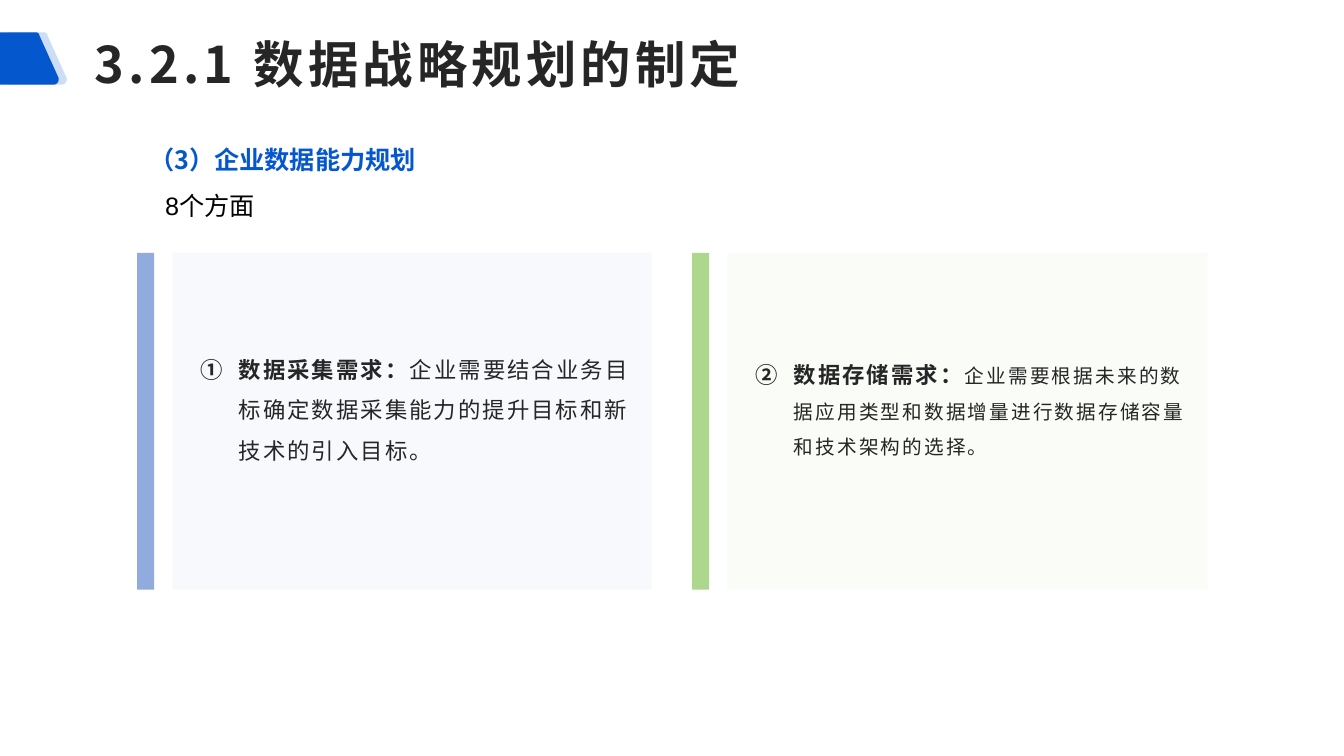
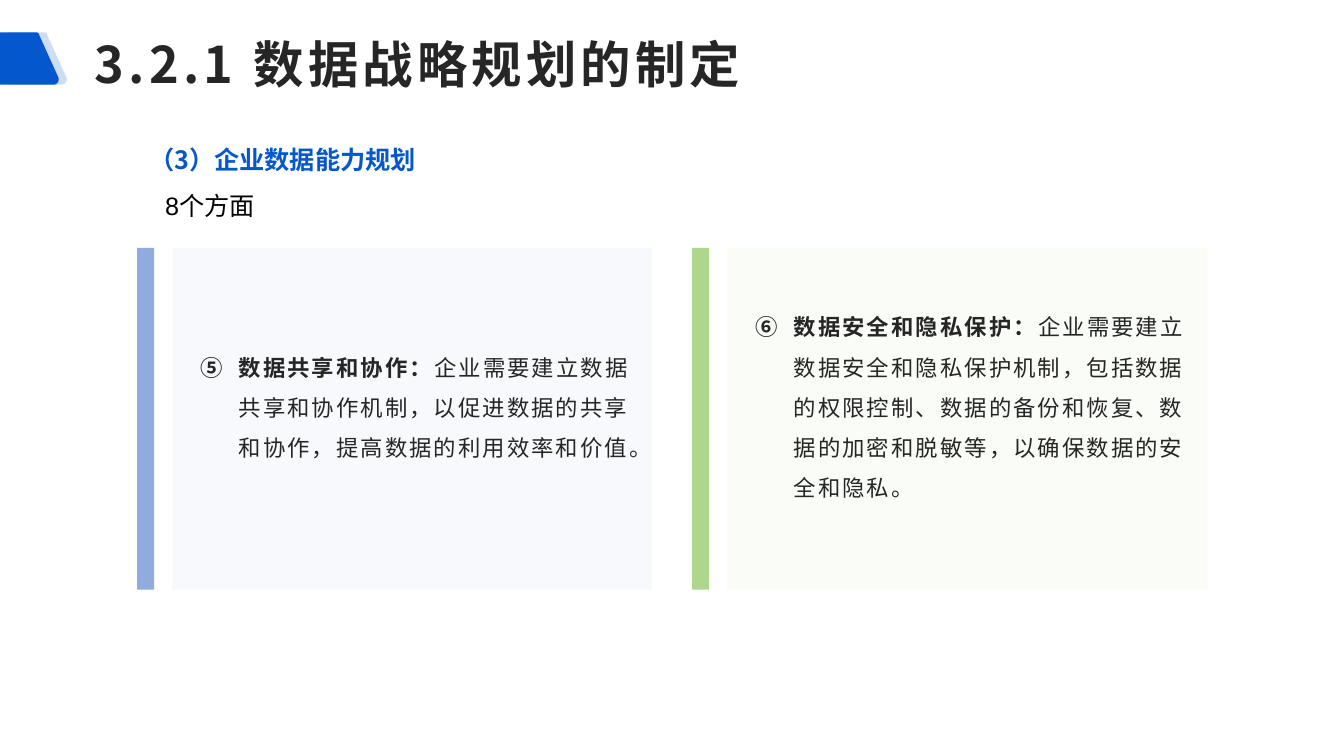
"""Two slides on planning enterprise data capabilities."""
from lxml import etree
from pptx import Presentation
from pptx.dml.color import RGBColor
from pptx.enum.shapes import MSO_SHAPE
from pptx.enum.text import MSO_ANCHOR, PP_ALIGN
from pptx.oxml.ns import qn
from pptx.util import Inches, Pt

RECTANGLE = MSO_SHAPE.RECTANGLE
TOP, MIDDLE = MSO_ANCHOR.TOP, MSO_ANCHOR.MIDDLE
LEFT, JUSTIFY = PP_ALIGN.LEFT, PP_ALIGN.JUSTIFY

COLORS = {"brand": "0557CD", "ink": "262626", "black": "000000"}
CARD_COLORS = [
    {"bar": "4874CB", "panel": "DAE3F5"},
    {"bar": "75BD42", "panel": "E3F2D9"},
]
CJK_FONT = "Noto Sans CJK SC"

TITLE = "3.2.1 数据战略规划的制定"
SECTION = "（3）企业数据能力规划"
COUNT = "8个方面"
SLIDES = [
    {"card_top": 2.51, "first_number": 1, "needs": [
        ("数据采集需求：", "企业需要结合业务目标确定数据采集能力的提升目标和新技术的引入目标。", 16),
        ("数据存储需求：", "企业需要根据未来的数据应用类型和数据增量进行数据存储容量和技术架构的选择。", 14),
    ]},
    {"card_top": 2.46, "first_number": 5, "needs": [
        ("数据共享和协作：", "企业需要建立数据共享和协作机制，以促进数据的共享和协作，提高数据的利用效率和价值。", 16),
        ("数据安全和隐私保护：",
         "企业需要建立数据安全和隐私保护机制，包括数据的权限控制、数据的备份和恢复、"
         "数据的加密和脱敏等，以确保数据的安全和隐私。", 16),
    ]},
]

CARD_LEFT, CARD_BOTTOM, CARD_PITCH = 1.36, 5.85, 5.505
BAR_WIDTH, PANEL_OFFSET, PANEL_WIDTH = 0.17, 0.35, 4.76
NEED_OFFSET, NEED_WIDTH, NEED_TOP_GAP, NEED_BOTTOM_GAP = 0.53, 4.47, 0.11, 0.47
TAB_TOP, TAB_BOTTOM, TAB_SHIFT = 0.32, 0.84, 0.08


def paint(shape, color, opacity=100):
    shape.shadow.inherit = False
    shape.fill.solid()
    shape.fill.fore_color.rgb = RGBColor.from_string(color)
    shape.line.fill.background()
    if opacity < 100:
        fill_color = shape.element.find(".//" + qn("a:srgbClr"))
        etree.SubElement(fill_color, qn("a:alpha"), val=str(opacity * 1000))


def add_text(slide, box, runs, *, size=18, color=COLORS["ink"], font=CJK_FONT, spacing=0,
             anchor=TOP, align=LEFT, line_spacing=1.0, left_indent=0, first_indent=0,
             number=None, insets=(0.1, 0.05)):
    frame = slide.shapes.add_textbox(*map(Inches, box)).text_frame
    frame.word_wrap = True
    frame.vertical_anchor = anchor
    frame.margin_left = frame.margin_right = Inches(insets[0])
    frame.margin_top = frame.margin_bottom = Inches(insets[1])
    paragraph = frame.paragraphs[0]
    properties = paragraph._p.get_or_add_pPr()
    properties.set("marL", str(Inches(left_indent)))
    properties.set("indent", str(Inches(first_indent)))
    if number:
        etree.SubElement(properties, qn("a:buFont"), typeface=font)
        etree.SubElement(properties, qn("a:buAutoNum"), type="circleNumDbPlain", startAt=str(number))
    paragraph.alignment = align
    paragraph.line_spacing = line_spacing
    for text, form in runs:
        run = paragraph.add_run()
        run.text = text
        run.font.size = Pt(form.get("size", size))
        run.font.bold = form.get("bold", False)
        run.font.color.rgb = RGBColor.from_string(color)
        run.font.name = font
        letters = run._r.get_or_add_rPr()
        letters.set("lang", "zh-CN")
        letters.set("spc", str(int(spacing * 100)))
        etree.SubElement(letters, qn("a:ea"), typeface=CJK_FONT)


def curve(start, control_1, control_2, end, steps=8):
    points = []
    for step in range(steps + 1):
        t = step / steps
        weights = ((1 - t) ** 3, 3 * t * (1 - t) ** 2, 3 * t ** 2 * (1 - t), t ** 3)
        corners = (start, control_1, control_2, end)
        points.append(tuple(sum(w * c[axis] for w, c in zip(weights, corners)) for axis in (0, 1)))
    return points


def add_title_tab(slide, shift, opacity):
    outline = (curve((0.35, TAB_TOP), (0.37, TAB_TOP), (0.39, 0.33), (0.39, 0.35))
               + curve((0.58, 0.77), (0.59, 0.8), (0.57, TAB_BOTTOM), (0.53, TAB_BOTTOM))
               + [(0, TAB_BOTTOM)])
    builder = slide.shapes.build_freeform(Inches(shift), Inches(TAB_TOP))
    builder.add_line_segments([(Inches(x + shift), Inches(y)) for x, y in outline], close=True)
    paint(builder.convert_to_shape(), COLORS["brand"], opacity)


def add_card(slide, index, top, number, need):
    heading, detail, detail_size = need
    left = CARD_LEFT + index * CARD_PITCH
    height = CARD_BOTTOM - top
    for part, offset, width, opacity in (("panel", PANEL_OFFSET, PANEL_WIDTH, 20),
                                         ("bar", 0, BAR_WIDTH, 60)):
        block = slide.shapes.add_shape(
            RECTANGLE, *map(Inches, (left + offset, top, width, height)))
        paint(block, CARD_COLORS[index][part], opacity)
    add_text(slide, (left + NEED_OFFSET, top + NEED_TOP_GAP, NEED_WIDTH,
                     height - NEED_TOP_GAP - NEED_BOTTOM_GAP),
             [(heading, {"bold": True}), (detail, {"size": detail_size})],
             size=16, spacing=1.5, anchor=MIDDLE, line_spacing=1.5,
             left_indent=0.38, first_indent=-0.38, number=number)


def add_header(slide):
    add_title_tab(slide, TAB_SHIFT, 20)
    add_title_tab(slide, 0, 100)
    add_text(slide, (0.87, 0.26, 11.33, 0.74), [(TITLE, {"bold": True})],
             size=36, spacing=3, anchor=MIDDLE, insets=(0.07, 0.03))
    add_text(slide, (0.88, 1.23, 11.56, 0.77), [(SECTION, {"bold": True})],
             color=COLORS["brand"], align=JUSTIFY, line_spacing=1.5, first_indent=0.5)
    add_text(slide, (1.54, 1.84, 3.22, 0.4), [(COUNT, {})], color=COLORS["black"], font="Arial")


def main():
    deck = Presentation()
    deck.slide_width, deck.slide_height = Inches(13.33), Inches(7.5)
    for content in SLIDES:
        slide = deck.slides.add_slide(deck.slide_layouts[6])
        add_header(slide)
        for index, need in enumerate(content["needs"]):
            add_card(slide, index, content["card_top"], content["first_number"] + index, need)
    deck.save("out.pptx")


if __name__ == "__main__":
    main()
